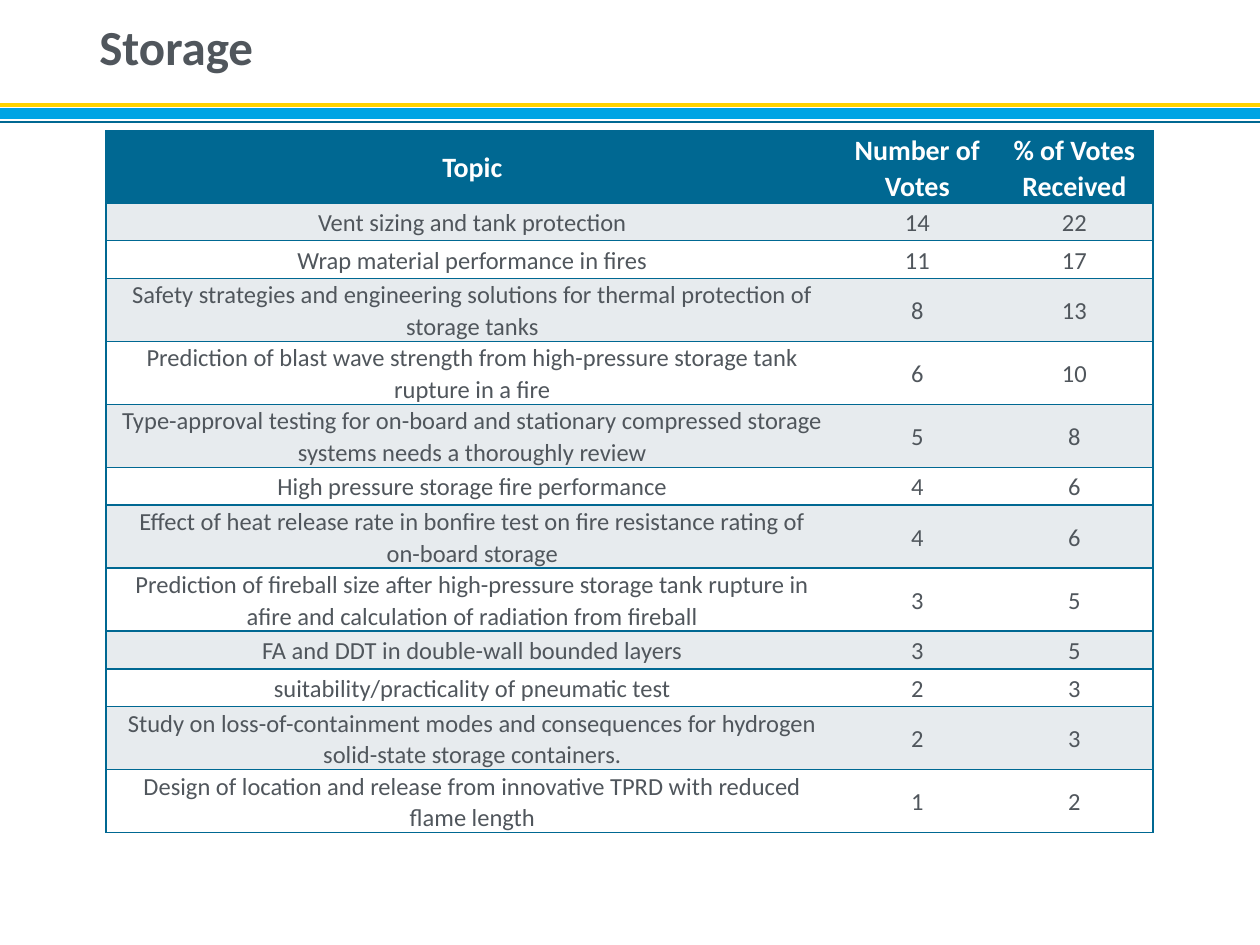
from typing import NamedTuple

from lxml import etree
from pptx import Presentation
from pptx.dml.color import RGBColor
from pptx.enum.shapes import MSO_CONNECTOR
from pptx.enum.text import MSO_ANCHOR, PP_ALIGN
from pptx.oxml.ns import qn
from pptx.util import Inches, Pt

STRAIGHT = MSO_CONNECTOR.STRAIGHT
MIDDLE = MSO_ANCHOR.MIDDLE
CENTER = PP_ALIGN.CENTER
LEFT = PP_ALIGN.LEFT

WHITE = RGBColor(0xFF, 0xFF, 0xFF)
PALE_GREY = RGBColor(0xE7, 0xEB, 0xEE)
DARK_GREY = RGBColor(0x50, 0x56, 0x5C)
DEEP_BLUE = RGBColor(0x00, 0x68, 0x92)
SKY_BLUE = RGBColor(0x00, 0xA4, 0xE4)
YELLOW = RGBColor(0xFF, 0xD2, 0x00)

FONT = "Calibri"
PAGE_WIDTH = 10
PAGE_HEIGHT = 7.5
TABLE_LEFT = 0.84
TABLE_TOP = 1.04
TABLE_WIDTH = 8.31
MIN_ROW_HEIGHT = 0.3
COLUMN_SHARES = (0.7, 0.15, 0.15)
CELL_MARGIN = 0.12


class Stripe(NamedTuple):
    y: float
    color: RGBColor
    width: float


class Topic(NamedTuple):
    name: str
    votes: str
    percent: str


STRIPES = [
    Stripe(0.9, SKY_BLUE, 6),
    Stripe(0.97, DEEP_BLUE, 1.5),
    Stripe(0.83, YELLOW, 2.25),
]

HEADER = Topic("Topic", "Number of Votes", "% of Votes Received")
TOPICS = [
    Topic("Vent sizing and tank protection", "14", "22"),
    Topic("Wrap material performance in fires", "11", "17"),
    Topic("Safety strategies and engineering solutions for thermal protection of storage tanks", "8", "13"),
    Topic("Prediction of blast wave strength from high-pressure storage tank rupture in a fire", "6", "10"),
    Topic("Type-approval testing for on-board and stationary compressed storage systems "
          "needs a thoroughly review", "5", "8"),
    Topic("High pressure storage fire performance", "4", "6"),
    Topic("Effect of heat release rate in bonfire test on fire resistance rating of on-board storage", "4", "6"),
    Topic("Prediction of fireball size after high-pressure storage tank rupture in afire "
          "and calculation of radiation from fireball", "3", "5"),
    Topic("FA and DDT in double-wall bounded layers", "3", "5"),
    Topic("suitability/practicality of pneumatic test", "2", "3"),
    Topic("Study on loss-of-containment modes and consequences for hydrogen "
          "solid-state storage containers.", "2", "3"),
    Topic("Design of location and release from innovative TPRD with reduced flame length", "1", "2"),
]


def write(frame, text: str, *, size: float, color: RGBColor, bold: bool = False,
          align=LEFT, spacing: float = 1.0) -> None:
    para = frame.paragraphs[0]
    para.alignment = align
    para.line_spacing = spacing
    span = para.add_run()
    span.text = text
    span.font.name = FONT
    span.font.size = Pt(size)
    span.font.bold = bold
    span.font.color.rgb = color


def draw_stripe(page, stripe: Stripe) -> None:
    y = Inches(stripe.y)
    line = page.shapes.add_connector(STRAIGHT, 0, y, Inches(PAGE_WIDTH), y)
    line.line.color.rgb = stripe.color
    line.line.width = Pt(stripe.width)
    etree.SubElement(line._element.spPr, qn("a:effectLst"))


def draw_title(page, text: str) -> None:
    box = page.shapes.add_textbox(Inches(0.69), 0, Inches(8.62), Inches(0.79))
    frame = box.text_frame
    frame.word_wrap = True
    frame.vertical_anchor = MIDDLE
    write(frame, text, size=28, color=DARK_GREY, bold=True, spacing=0.9)


def set_borders(cell, visible: str) -> None:
    """Draw the sides named by letters from L, R, T and B; clear the others."""
    properties = cell._tc.get_or_add_tcPr()
    for side in "LRTB":
        border = etree.SubElement(properties, qn(f"a:ln{side}"), w=str(Pt(1)))
        if side in visible:
            fill = etree.SubElement(border, qn("a:solidFill"))
            etree.SubElement(fill, qn("a:srgbClr"), val=str(DEEP_BLUE))
        else:
            etree.SubElement(border, qn("a:noFill"))


def draw_row(table, row: int, topic: Topic) -> None:
    is_header = row == 0
    background = DEEP_BLUE if is_header else PALE_GREY if row % 2 else WHITE
    for column, (text, sides) in enumerate(zip(topic, ("LTB", "TB", "RTB"))):
        cell = table.cell(row, column)
        set_borders(cell, sides)
        cell.fill.solid()
        cell.fill.fore_color.rgb = background
        cell.vertical_anchor = MIDDLE
        cell.margin_left = cell.margin_right = Inches(CELL_MARGIN)
        cell.margin_top = cell.margin_bottom = 0
        write(cell.text_frame, text, size=16 if is_header else 14,
              color=WHITE if is_header else DARK_GREY, bold=is_header,
              align=CENTER, spacing=1.07)


def draw_table(page, rows: list[Topic]) -> None:
    table = page.shapes.add_table(
        len(rows), len(COLUMN_SHARES), Inches(TABLE_LEFT), Inches(TABLE_TOP),
        Inches(TABLE_WIDTH), Inches(MIN_ROW_HEIGHT * len(rows))).table
    table.horz_banding = False
    for column, share in zip(table.columns, COLUMN_SHARES):
        column.width = Inches(TABLE_WIDTH * share)
    for row, topic in enumerate(rows):
        draw_row(table, row, topic)


def main() -> None:
    deck = Presentation()
    deck.slide_width = Inches(PAGE_WIDTH)
    deck.slide_height = Inches(PAGE_HEIGHT)
    page = deck.slides.add_slide(deck.slide_layouts[6])
    for stripe in STRIPES:
        draw_stripe(page, stripe)
    draw_title(page, "Storage")
    draw_table(page, [HEADER, *TOPICS])
    deck.save("out.pptx")


if __name__ == "__main__":
    main()
